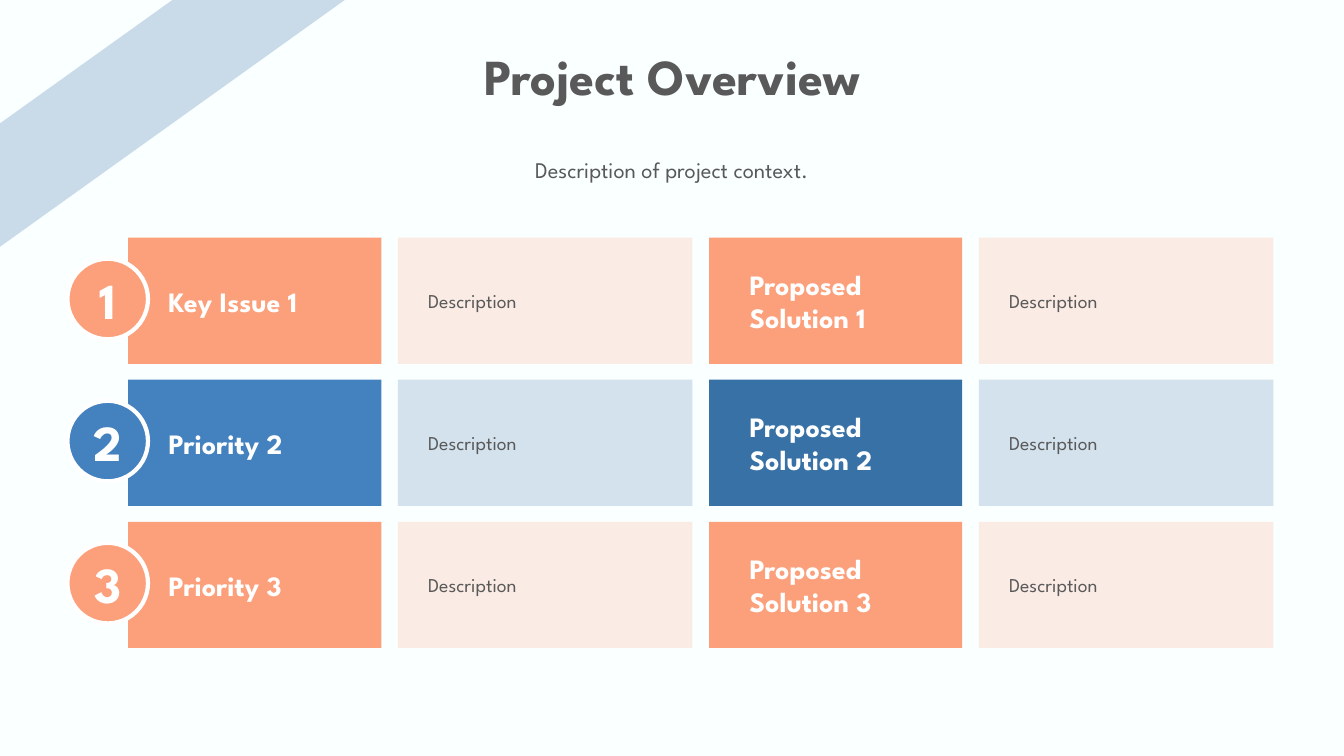
from dataclasses import dataclass

import lxml.etree
import pptx
import pptx.dml.color
import pptx.enum.shapes
import pptx.enum.text
import pptx.oxml.ns
import pptx.shapes.autoshape
import pptx.slide
import pptx.util

Cm = pptx.util.Cm
RGBColor = pptx.dml.color.RGBColor
MSO_SHAPE = pptx.enum.shapes.MSO_SHAPE
PP_ALIGN = pptx.enum.text.PP_ALIGN
MSO_ANCHOR = pptx.enum.text.MSO_ANCHOR

FONT = "League Spartan"
PAPER = RGBColor(0xFA, 0xFF, 0xFF)
GREY = RGBColor(0x59, 0x59, 0x59)
WHITE = RGBColor(0xFF, 0xFF, 0xFF)
ORANGE = RGBColor(0xFC, 0x9F, 0x7B)
BLUE = RGBColor(0x44, 0x82, 0xBF)
NAVY = RGBColor(0x38, 0x71, 0xA6)

# Grid, in centimetres
LEFT, TOP, GAP = 3.23, 5.99, 0.42
LABEL_W, DESC_W, ROW_H, ROW_STEP = 6.38, 7.42, 3.18, 3.58

Box = tuple[float, float, float, float]


@dataclass(frozen=True)
class Row:
    issue: str
    solution: str
    issue_color: RGBColor
    solution_color: RGBColor


ROWS = [
    Row("Key Issue 1", "Proposed Solution 1", ORANGE, ORANGE),
    Row("Priority 2", "Proposed Solution 2", BLUE, NAVY),
    Row("Priority 3", "Proposed Solution 3", ORANGE, ORANGE),
]


def write(sp: pptx.shapes.autoshape.Shape, text: str, *, size: float,
          color: RGBColor = GREY, bold: bool = False,
          align: PP_ALIGN = PP_ALIGN.CENTER, anchor: MSO_ANCHOR = MSO_ANCHOR.TOP,
          insets: Box = (0.25, 0.13, 0.25, 0.13)) -> None:
    tf = sp.text_frame
    tf.word_wrap = True
    tf.vertical_anchor = anchor
    tf.margin_left, tf.margin_top, tf.margin_right, tf.margin_bottom = map(Cm, insets)
    p = tf.paragraphs[0]
    p.alignment = align
    r = p.add_run()
    r.text = text
    r.font.name, r.font.size, r.font.bold = FONT, pptx.util.Pt(size), bold
    r.font.color.rgb = color


def add_shape(s: pptx.slide.Slide, kind: MSO_SHAPE, box: Box, color: RGBColor,
              opacity: int = 100) -> pptx.shapes.autoshape.Shape:
    sp = s.shapes.add_shape(kind, *map(Cm, box))
    sp.shadow.inherit = False
    sp.line.fill.background()
    sp.fill.solid()
    sp.fill.fore_color.rgb = color
    if opacity < 100:
        qn = pptx.oxml.ns.qn
        clr = sp.fill._xPr.find(qn("a:solidFill")).find(qn("a:srgbClr"))
        lxml.etree.SubElement(clr, qn("a:alpha")).set("val", str(opacity * 1000))
    return sp


def add_textbox(s: pptx.slide.Slide, box: Box, text: str, **fmt) -> None:
    write(s.shapes.add_textbox(*map(Cm, box)), text, **fmt)


def add_pair(s: pptx.slide.Slide, left: float, top: float, label: str,
             color: RGBColor, tint: RGBColor) -> None:
    """Draw a solid label cell and the tinted description cell beside it."""
    middle = {"align": PP_ALIGN.LEFT, "anchor": MSO_ANCHOR.MIDDLE}
    sp = add_shape(s, MSO_SHAPE.RECTANGLE, (left, top, LABEL_W, ROW_H), color)
    write(sp, label, size=20, color=WHITE, bold=True,
          insets=(1.02, 0.76, 0.25, 0.76), **middle)
    desc_left = left + LABEL_W + GAP
    sp = add_shape(s, MSO_SHAPE.RECTANGLE, (desc_left, top, DESC_W, ROW_H), tint, 20)
    write(sp, "Description", size=14, insets=(0.76, 0.51, 0.76, 0.51), **middle)


def add_badge(s: pptx.slide.Slide, top: float, number: int, color: RGBColor) -> None:
    sp = add_shape(s, MSO_SHAPE.OVAL, (1.7, top + 0.53, 2.03, 2.03), color)
    sp.line.color.rgb = WHITE
    sp.line.width = pptx.util.Pt(3)
    add_textbox(s, (2.01, top + 0.66, 1.42, 1.8), str(number),
                size=36, color=WHITE, bold=True)


def main() -> None:
    prs = pptx.Presentation()
    prs.slide_width, prs.slide_height = Cm(33.87), Cm(19.05)
    s = prs.slides.add_slide(prs.slide_layouts[6])
    s.background.fill.solid()
    s.background.fill.fore_color.rgb = PAPER

    # Heading and corner stripe
    add_textbox(s, (1.8, 1.02, 30.28, 1.8), "Project Overview", size=36, bold=True)
    add_textbox(s, (3.76, 3.81, 26.34, 0.94), "Description of project context.", size=16)
    add_shape(s, MSO_SHAPE.DIAGONAL_STRIPE, (0, 0, 8.69, 6.22), NAVY, 25)

    # Issues with their solutions
    solution_left = LEFT + LABEL_W + DESC_W + 2 * GAP
    for i, row in enumerate(ROWS):
        top = TOP + i * ROW_STEP
        add_pair(s, LEFT, top, row.issue, row.issue_color, row.solution_color)
        add_pair(s, solution_left, top, row.solution, row.solution_color,
                 row.solution_color)
        add_badge(s, top, i + 1, row.issue_color)

    prs.save("out.pptx")


if __name__ == "__main__":
    main()
